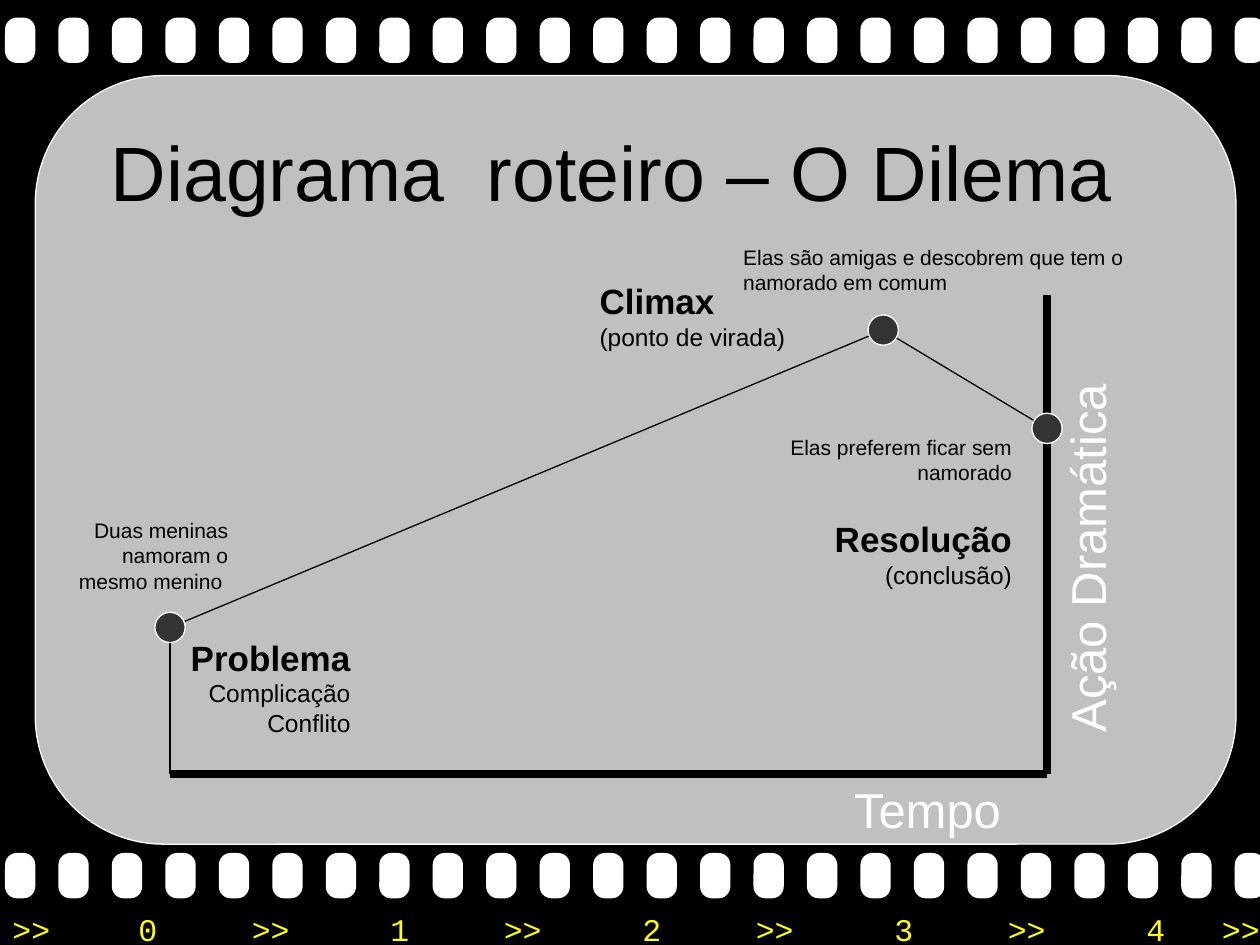
from copy import deepcopy

from lxml.etree import SubElement
from pptx import Presentation
from pptx.dml.color import RGBColor
from pptx.enum.shapes import MSO_CONNECTOR, MSO_SHAPE as Preset
from pptx.enum.text import MSO_ANCHOR as Anchor, PP_ALIGN as Align
from pptx.oxml.ns import qn
from pptx.util import Inches, Pt

BLACK = RGBColor(0x00, 0x00, 0x00)
WHITE = RGBColor(0xFF, 0xFF, 0xFF)
SILVER = RGBColor(0xC0, 0xC0, 0xC0)
CHARCOAL = RGBColor(0x33, 0x33, 0x33)
YELLOW = RGBColor(0xFF, 0xFF, 0x00)

HOLE_COUNT = 24
HOLE_PITCH = 9.76 / (HOLE_COUNT - 1)
DOT_SIZE = 0.24

# Story points and the corner of the axes
START = (1.35, 6.14)
PROBLEM = (1.35, 4.98)
CLIMAX = (7.01, 2.62)
RESOLUTION = (8.31, 3.4)
CORNER = (8.31, 6.14)
AXIS_TOP = (8.31, 2.34)


def add_shape(parent, preset, left, top, width, height, fill, line=None, corner=None):
    shape = parent.shapes.add_shape(
        preset, Inches(left), Inches(top), Inches(width), Inches(height))
    shape.shadow.inherit = False
    shape.fill.solid()
    shape.fill.fore_color.rgb = fill
    if line is None:
        shape.line.fill.background()
    else:
        shape.line.color.rgb = line
        shape.line.width = Pt(0.75)
    if corner is not None:
        shape.adjustments[0] = corner
    return shape


def add_perforations(page, top):
    group = page.shapes.add_group_shape()
    for index in range(HOLE_COUNT):
        add_shape(group, Preset.ROUNDED_RECTANGLE, 0.04 + index * HOLE_PITCH, top,
                  0.24, 0.36, WHITE, corner=0.39)


def add_line(parent, start, end, width=0.75):
    line = parent.shapes.add_connector(
        MSO_CONNECTOR.STRAIGHT, *(Inches(value) for value in start + end))
    line.line.color.rgb = BLACK
    line.line.width = Pt(width)
    SubElement(line._element.spPr, qn("a:effectLst"))


def add_dot(page, center):
    x, y = center
    add_shape(page, Preset.OVAL, x - DOT_SIZE / 2, y - DOT_SIZE / 2,
              DOT_SIZE, DOT_SIZE, CHARCOAL, line=WHITE)


def add_text(page, text, left, top, width, height, size=12, heading_size=None,
             color=BLACK, font="Arial", align=Align.LEFT, anchor=Anchor.TOP,
             rotation=0, wrap=True):
    """Add one paragraph; with heading_size its first line is a bold heading."""
    box = page.shapes.add_textbox(
        Inches(left), Inches(top), Inches(width), Inches(height))
    box.rotation = rotation
    frame = box.text_frame
    frame.word_wrap = wrap
    frame.vertical_anchor = anchor
    para = frame.paragraphs[0]
    para.alignment = align
    for index, line in enumerate(text.split("\n")):
        is_heading = heading_size is not None and index == 0
        if index:
            # The break takes the format of the line it ends
            para.add_line_break()
            para._p[-1].append(deepcopy(span._r.rPr))
        span = para.add_run()
        span.text = line
        span.font.name = font
        span.font.size = Pt(heading_size if is_heading else size)
        span.font.bold = is_heading
        span.font.color.rgb = color
    return box


def set_tab_stops(box, stops):
    properties = box.text_frame.paragraphs[0]._p.get_or_add_pPr()
    tab_list = SubElement(properties, qn("a:tabLst"))
    for stop in stops:
        SubElement(tab_list, qn("a:tab"), pos=str(Inches(stop)), algn="l")


def add_film_frame(page):
    add_shape(page, Preset.ROUNDED_RECTANGLE, 0.28, 0.6, 9.53, 6.1, SILVER,
              line=WHITE, corner=0.167)
    for top in (6.77, 0.14):
        add_perforations(page, top)
    counter = "\t".join(f">>\t{number}" for number in range(5)) + "\t>>"
    box = add_text(page, counter, 0, 7.17, 10.2, 0.4, size=18, color=YELLOW,
                   font="Courier New", wrap=False)
    number_stops = [1 + 2 * index for index in range(5)]
    arrow_stops = [1.9 + 2 * index for index in range(4)] + [9.6]
    set_tab_stops(box, sorted(number_stops + arrow_stops))


def add_diagram(page):
    # Thick axes
    axes = page.shapes.add_group_shape()
    add_line(axes, START, CORNER, width=4.5)
    add_line(axes, CORNER, AXIS_TOP, width=4.5)

    # Story curve and its turning points
    curve = [START, PROBLEM, CLIMAX, RESOLUTION]
    for start, end in zip(curve, curve[1:]):
        add_line(page, start, end)
    for point in curve[1:]:
        add_dot(page, point)


def add_labels(page):
    # Axis names
    add_text(page, "Tempo", 6.68, 6.14, 1.62, 0.57, size=28, color=WHITE)
    add_text(page, "Ação Dramática", 6.84, 3.84, 3.57, 0.57, size=28, color=WHITE,
             rotation=270)

    # Stage names
    add_text(page, "Problema\nComplicação\nConflito", 1.09, 5, 1.79, 0.9,
             size=14, heading_size=20, align=Align.RIGHT)
    add_text(page, "Climax\n(ponto de virada)", 4.66, 2.17, 1.89, 0.67,
             size=14, heading_size=20)
    add_text(page, "Resolução\n(conclusão)", 6.24, 4.06, 1.89, 0.67,
             size=14, heading_size=20, align=Align.RIGHT)

    # Plot notes
    add_text(page, "Duas meninas namoram o mesmo menino ", 0.4, 4.06, 1.51, 0.71,
             align=Align.RIGHT)
    add_text(page, "Elas são amigas e descobrem que tem o namorado em comum",
             5.8, 1.89, 3.29, 0.5)
    add_text(page, "Elas preferem ficar sem namorado", 6.13, 3.4, 2, 0.5,
             align=Align.RIGHT)


def main():
    deck = Presentation()
    deck.slide_width, deck.slide_height = Inches(10), Inches(7.5)
    page = deck.slides.add_slide(deck.slide_layouts[6])
    page.background.fill.solid()
    page.background.fill.fore_color.rgb = BLACK

    add_film_frame(page)
    add_text(page, "Diagrama  roteiro – O Dilema", 0.78, 0.88, 8.72, 0.95,
             size=44, anchor=Anchor.MIDDLE)
    add_diagram(page)
    add_labels(page)
    deck.save("out.pptx")


if __name__ == "__main__":
    main()
